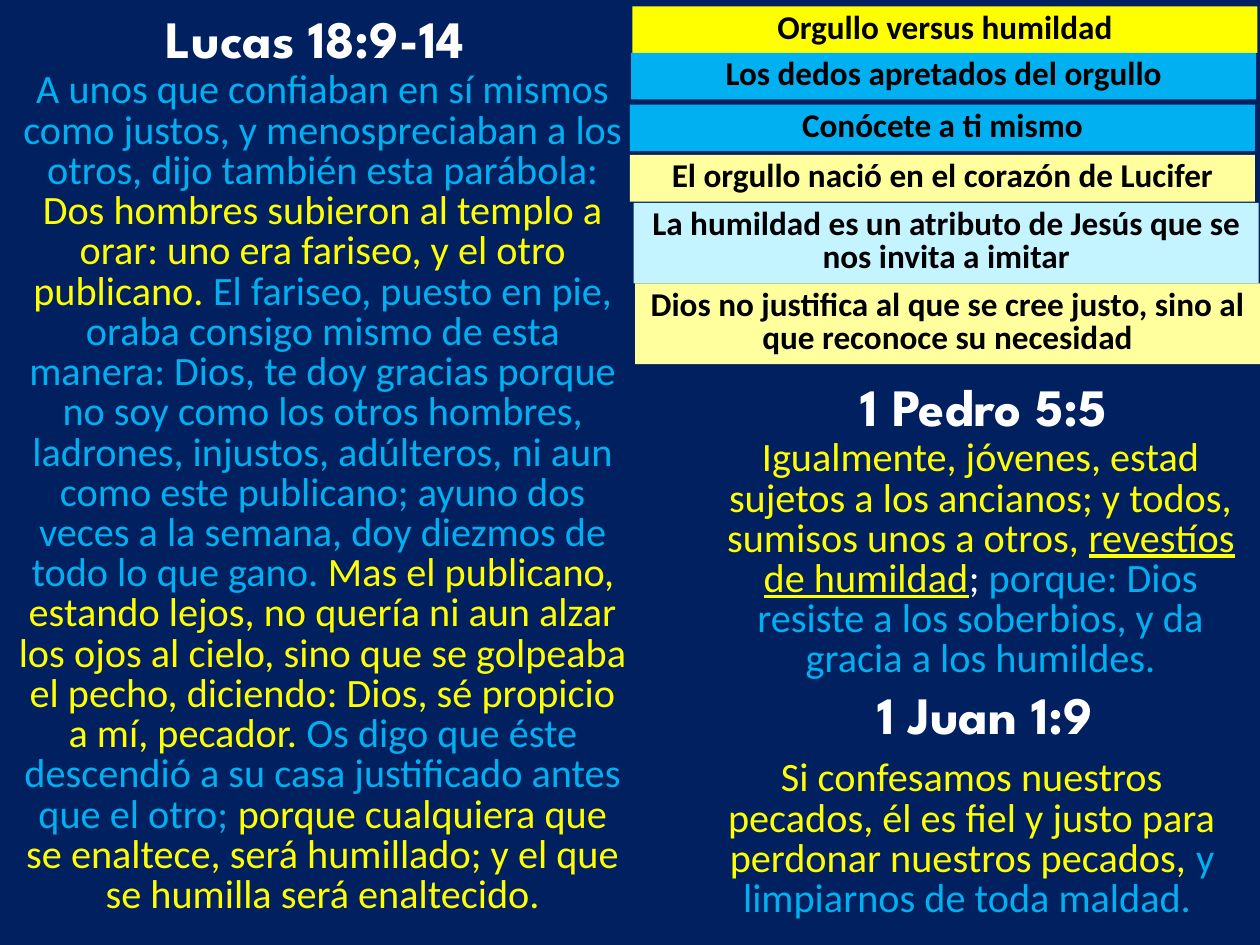
from pptx import Presentation, util as u
from pptx.dml.color import RGBColor
from pptx.enum import shapes, text

PX = 9144  # EMU per px, 100 px to the inch
COLORS = {
    "navy": "002060", "white": "FFFFFF", "black": "000000", "blue": "00B0F0",
    "yellow": "FFFF00", "cream": "FFFF9E", "ice": "C3F4FF",
}
HEADING = {"name": "League Spartan", "size": u.Pt(30), "bold": True}
VERSE = {"name": "Calibri", "size": u.Pt(23)}
POINT = {"name": "Calibri", "size": u.Pt(19), "bold": True}
UNDERLINED = {"underline": True}
FRAME = {
    "word_wrap": True,
    "auto_size": text.MSO_AUTO_SIZE.SHAPE_TO_FIT_TEXT,
    "margin_left": u.Inches(0.1), "margin_right": u.Inches(0.1),
    "margin_top": u.Inches(0.05), "margin_bottom": u.Inches(0.05),
}

# left, top, width, height of each heading and its verse
LUCAS = (12, 0, 465, 61), (5, 52, 503, 688)
PEDRO = (563, 292, 425, 61), (562, 344, 433, 204)
JUAN = (564, 536, 425, 61), (555, 598, 433, 140)

LUCAS_RUNS = [
    ("A unos que confiaban en sí mismos como justos, y menospreciaban a los "
     "otros, dijo también esta parábola: ", "blue"),
    ("Dos hombres subieron al templo a orar: uno era fariseo, y el otro "
     "publicano. ", "yellow"),
    ("El fariseo, puesto en pie, oraba consigo mismo de esta manera: Dios, te "
     "doy gracias porque no soy como los otros hombres, ladrones, injustos, "
     "adúlteros, ni aun como este publicano; ayuno dos veces a la semana, doy "
     "diezmos de todo lo que gano. ", "blue"),
    ("Mas el publicano, estando lejos, no quería ni aun alzar los ojos al "
     "cielo, sino que se golpeaba el pecho, diciendo: Dios, sé propicio a mí, "
     "pecador. ", "yellow"),
    ("Os digo que éste descendió a su casa justificado antes que el otro; ",
     "blue"),
    ("porque cualquiera que se enaltece, será humillado; y el que se humilla "
     "será enaltecido.", "yellow"),
]
PEDRO_RUNS = [
    ("Igualmente, jóvenes, estad sujetos a los ancianos; y todos, sumisos "
     "unos a otros, ", "yellow"),
    ("revestíos de humildad", "yellow", UNDERLINED),
    ("; ", "white"),
    ("porque: Dios resiste a los soberbios, y da gracia a los humildes.",
     "blue"),
]
JUAN_RUNS = [
    ("Si confesamos nuestros pecados, él es fiel y justo para perdonar "
     "nuestros pecados, ", "yellow"),
    ("y limpiarnos de toda maldad. ", "blue"),
]
# left, top, height, fill, wording
POINTS = [
    (502, 5, 37, "yellow", "Orgullo versus humildad"),
    (501, 42, 37, "blue", "Los dedos apretados del orgullo"),
    (500, 83, 37, "blue", "Conócete a ti mismo"),
    (500, 123, 37, "cream", "El orgullo nació en el corazón de Lucifer"),
    (503, 161, 64, "ice",
     "La humildad es un atributo de Jesús que se nos invita a imitar"),
    (504, 225, 64, "cream",
     "Dios no justifica al que se cree justo, sino al que reconoce su "
     "necesidad"),
]
POINT_WIDTH = 496


def rgb(name):
    return RGBColor.from_string(COLORS[name])


def emu(box):
    return [u.Emu(n * PX) for n in box]


def apply(target, values):
    for name, value in values.items():
        setattr(target, name, value)


def write(sp, runs, style, spacing, anchor=text.MSO_ANCHOR.TOP):
    """Fill a shape with one centred paragraph of coloured runs."""
    tf = sp.text_frame
    apply(tf, {**FRAME, "vertical_anchor": anchor})
    p = tf.paragraphs[0]
    apply(p, {"alignment": text.PP_ALIGN.CENTER, "line_spacing": spacing})
    for wording, color, *extra in runs:
        r = p.add_run()
        r.text = wording
        apply(r.font, style)
        for values in extra:
            apply(r.font, values)
        r.font.color.rgb = rgb(color)


def add_passage(slide, boxes, heading, runs, title=None):
    """Place a heading, in the title placeholder if given, and its verse."""
    heading_box, verse_box = boxes
    sp = title or slide.shapes.add_textbox(*emu(heading_box))
    apply(sp, dict(zip(("left", "top", "width", "height"), emu(heading_box))))
    write(sp, [(" " + heading, "white")], HEADING, 1.0)
    write(slide.shapes.add_textbox(*emu(verse_box)), runs, VERSE, u.Pt(23))


def add_point(slide, box, fill, wording):
    sp = slide.shapes.add_shape(shapes.MSO_SHAPE.RECTANGLE, *emu(box))
    sp.shadow.inherit = False
    sp.fill.solid()
    sp.fill.fore_color.rgb = rgb(fill)
    sp.line.fill.background()
    write(sp, [(wording, "black")], POINT, u.Pt(19))


def main():
    prs = Presentation()
    prs.slide_width, prs.slide_height = emu((1000, 750))
    slide = prs.slides.add_slide(prs.slide_layouts[5])
    slide.background.fill.solid()
    slide.background.fill.fore_color.rgb = rgb("navy")

    add_passage(slide, LUCAS, "Lucas 18:9-14", LUCAS_RUNS, slide.shapes.title)
    for left, top, height, fill, wording in POINTS:
        add_point(slide, (left, top, POINT_WIDTH, height), fill, wording)
    add_passage(slide, PEDRO, "1 Pedro 5:5", PEDRO_RUNS)
    add_passage(slide, JUAN, "1 Juan 1:9", JUAN_RUNS)
    prs.save("out.pptx")


if __name__ == "__main__":
    main()
